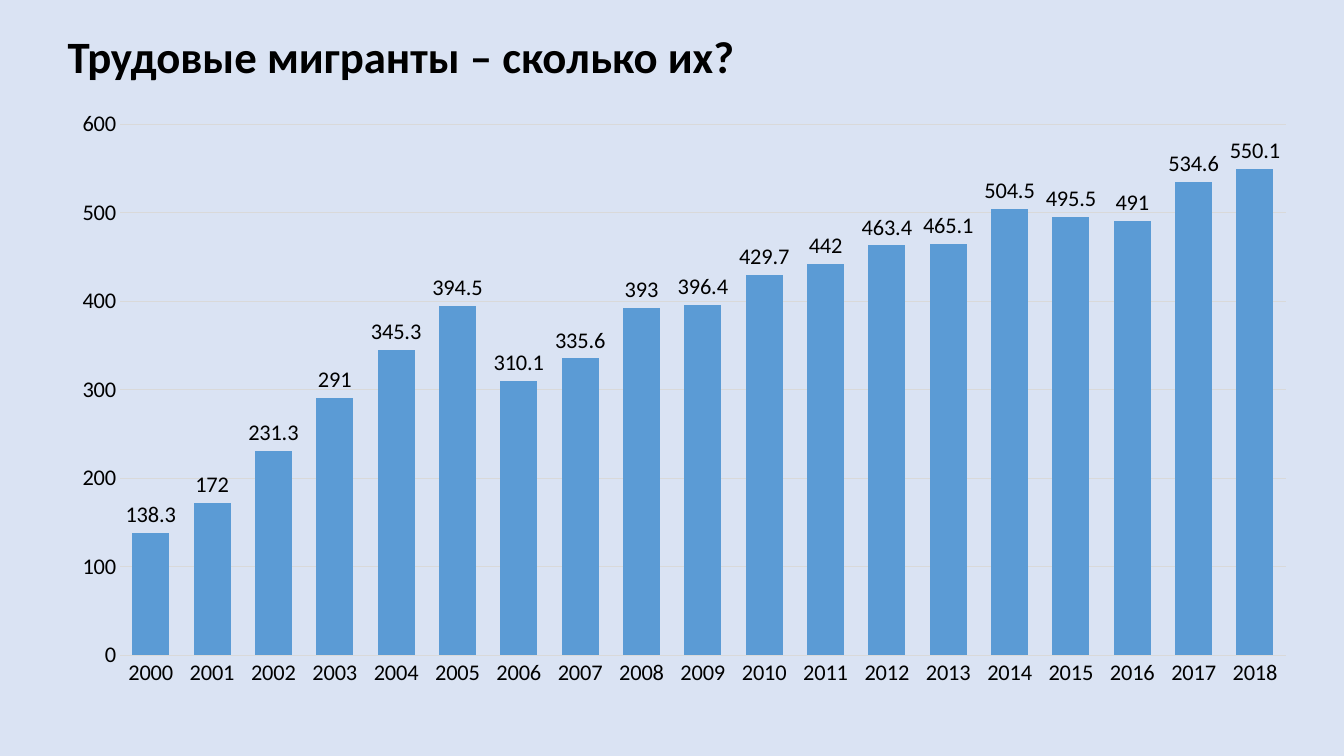
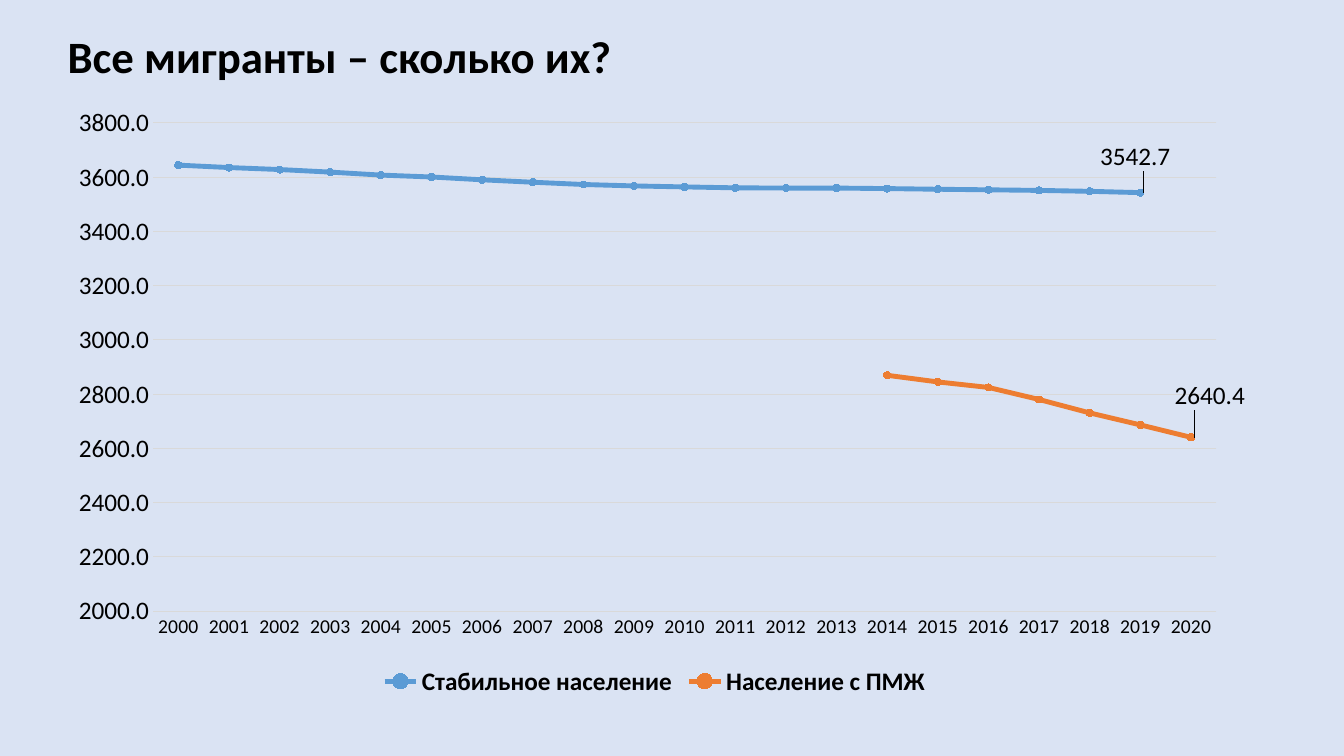
from lxml.etree import fromstring
from pptx import Presentation
from pptx.chart.data import CategoryChartData
from pptx.dml.color import RGBColor
from pptx.enum.chart import (XL_CHART_TYPE, XL_LABEL_POSITION,
                             XL_LEGEND_POSITION, XL_MARKER_STYLE, XL_TICK_MARK)
from pptx.enum.text import MSO_ANCHOR, PP_ALIGN
from pptx.util import Inches, Pt

COLORS = {"back": "DAE3F3", "text": "000000", "grid": "D9D9D9",
          "blue": "5B9BD5", "orange": "ED7D31"}
COLORS = {name: RGBColor.from_string(code) for name, code in COLORS.items()}
FACE = "Calibri"
NS = 'xmlns:c="http://schemas.openxmlformats.org/drawingml/2006/chart"'


def set_font(font, size, bold=False):
    font.name, font.size, font.bold = FACE, Pt(size), bold
    font.color.rgb = COLORS["text"]


def add_slide(text, kind, data, width, height, size, cat_size):
    """Add a titled slide with one styled chart and return the chart."""
    slide = prs.slides.add_slide(prs.slide_layouts[5])
    title = slide.shapes.title
    title.left, title.top = Inches(0.57), Inches(0.2)
    title.width, title.height = Inches(11.5), Inches(0.77)
    title.text_frame.text = text
    title.text_frame.vertical_anchor = MSO_ANCHOR.MIDDLE
    para = title.text_frame.paragraphs[0]
    para.alignment, para.line_spacing = PP_ALIGN.LEFT, 0.9
    set_font(para.font, 32, True)

    chart = slide.shapes.add_chart(kind, Inches(0.57), Inches(0.98),
                                   Inches(width), Inches(height), data).chart
    chart.has_title = chart.has_legend = False
    set_font(chart.font, size)
    cats, vals = chart.category_axis, chart.value_axis
    for axis, points in ((cats, cat_size), (vals, size)):
        axis.major_tick_mark = axis.minor_tick_mark = XL_TICK_MARK.NONE
        set_font(axis.tick_labels.font, points)
    vals.format.line.fill.background()
    for line in (cats.format.line, vals.major_gridlines.format.line):
        line.color.rgb, line.width = COLORS["grid"], Pt(0.75)
    return chart


prs = Presentation()
prs.slide_width, prs.slide_height = Inches(13.33), Inches(7.5)
fill = prs.slide_master.background.fill
fill.solid()
fill.fore_color.rgb = COLORS["back"]

# Slide 1: labour migrants, columns
data = CategoryChartData()
data.categories = [str(year) for year in range(2000, 2019)]
data.add_series("Series 1", [
    138.3, 172, 231.3, 291, 345.3, 394.5, 310.1, 335.6, 393, 396.4,
    429.7, 442, 463.4, 465.1, 504.5, 495.5, 491, 534.6, 550.1])
chart = add_slide("Трудовые мигранты – сколько их?", XL_CHART_TYPE.COLUMN_CLUSTERED,
                  data, 12.43, 5.95, 16, 16)
chart.value_axis.minimum_scale, chart.value_axis.maximum_scale = 0, 600
plot = chart.plots[0]
plot.gap_width, plot.overlap, plot.vary_by_categories = 66, -27, False
bars = plot.series[0].format.fill
bars.solid()
bars.fore_color.rgb = COLORS["blue"]
plot.has_data_labels = True
labels = plot.data_labels
labels.show_value, labels.position = True, XL_LABEL_POSITION.OUTSIDE_END
set_font(labels.font, 16)

# Slide 2: all migrants, lines
data = CategoryChartData(number_format="0.0")
data.categories = [str(year) for year in range(2000, 2021)]
data.add_series("Стабильное население", [
    3644.1, 3635.1, 3627.8, 3618.3, 3607.4, 3600.4, 3589.9, 3581.1, 3572.7, 3567.5,
    3563.7, 3560.4, 3559.5, 3559.5, 3557.6, 3555.2, 3553.1, 3550.9, 3547.5, 3542.7, None])
data.add_series("Население с ПМЖ", [None] * 14 + [
    2869.2, 2844.7, 2824.4, 2780, 2730.4, 2686.1, 2640.4])
chart = add_slide("Все мигранты – сколько их?", XL_CHART_TYPE.LINE_MARKERS,
                  data, 11.85, 5.98, 18, 14)
axis = chart.value_axis
axis.minimum_scale, axis.maximum_scale, axis.major_unit = 2000, 3800, 200
axis.tick_labels.number_format = "0.0"
axis.tick_labels.number_format_is_linked = False
chart.has_legend = True
chart.legend.position = XL_LEGEND_POSITION.BOTTOM
chart.legend.include_in_layout = False
set_font(chart.legend.font, 18, True)

# Fixed plot area
area = chart._chartSpace.chart.plotArea
for old in area.xpath("c:layout"):
    area.remove(old)
area.insert(0, fromstring(
    f'<c:layout {NS}><c:manualLayout><c:layoutTarget val="inner"/>'
    '<c:xMode val="edge"/><c:yMode val="edge"/><c:x val="0.08"/><c:y val="0.04"/>'
    '<c:w val="0.89"/><c:h val="0.81"/></c:manualLayout></c:layout>'))

# Series style, and a shifted label with a leader line on the last point
looks = (("blue", 19, -0.04, -0.06), ("orange", 20, -0.02, -0.07))
for series, (name, last, x, y) in zip(chart.plots[0].series, looks):
    series.smooth = False
    series.format.line.color.rgb = COLORS[name]
    series.format.line.width = Pt(3.5)
    mark = series.marker
    mark.style, mark.size = XL_MARKER_STYLE.CIRCLE, 5
    mark.format.fill.solid()
    mark.format.fill.fore_color.rgb = COLORS[name]
    mark.format.line.color.rgb = COLORS[name]
    series.data_labels.show_value = False
    label = series.points[last].data_label
    label.position = XL_LABEL_POSITION.RIGHT
    set_font(label.font, 18)
    group = series._element.xpath("c:dLbls")[0]
    group.xpath("c:dLbl/c:idx")[0].addnext(fromstring(
        f'<c:layout {NS}><c:manualLayout><c:x val="{x}"/><c:y val="{y}"/>'
        '</c:manualLayout></c:layout>'))

prs.save("out.pptx")
